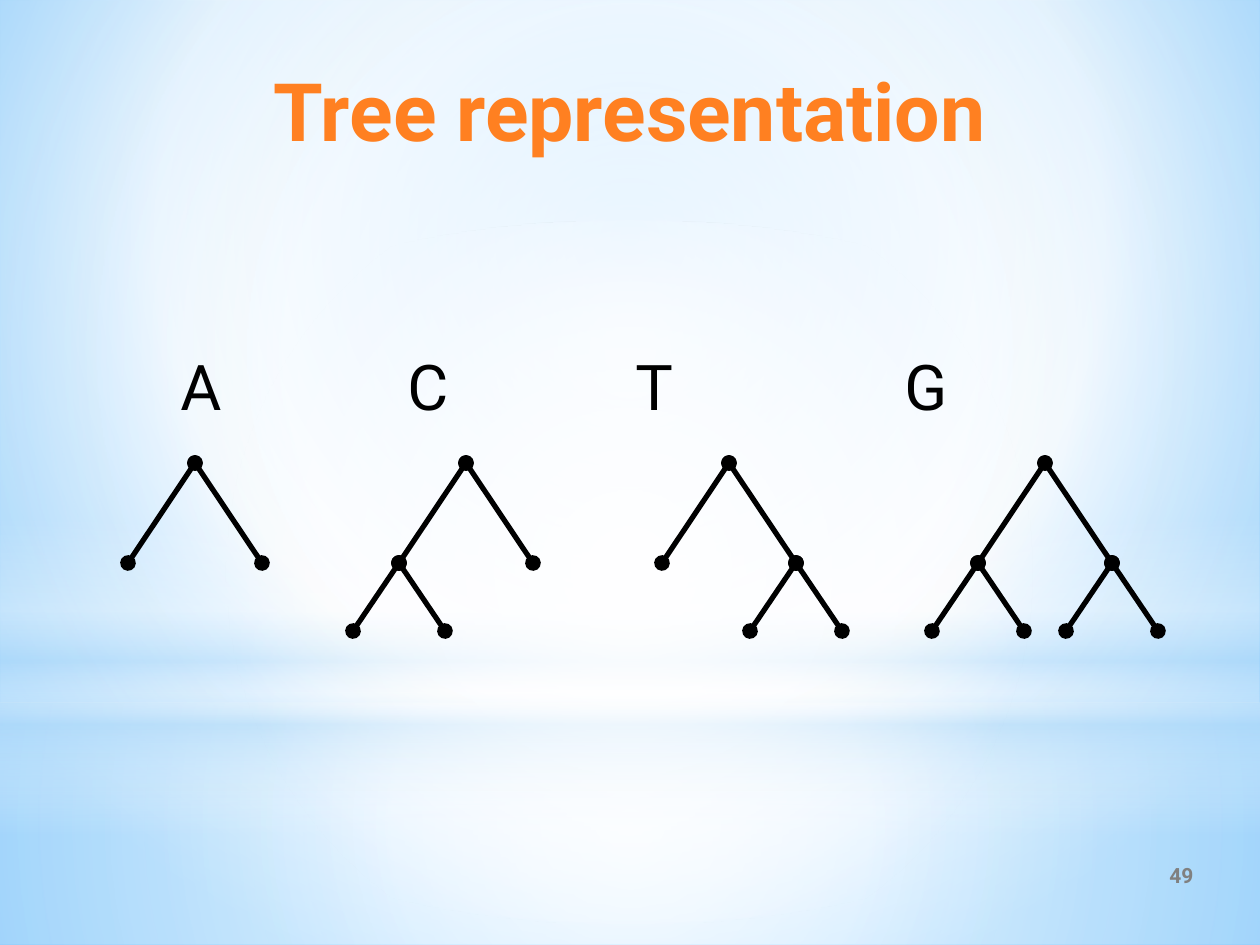
from lxml import etree
from pptx import Presentation
from pptx.dml.color import RGBColor
from pptx.enum.shapes import MSO_CONNECTOR, MSO_SHAPE
from pptx.enum.text import MSO_ANCHOR, PP_ALIGN
from pptx.oxml.ns import qn
from pptx.util import Pt

RECT, OVAL = MSO_SHAPE.RECTANGLE, MSO_SHAPE.OVAL
STRAIGHT = MSO_CONNECTOR.STRAIGHT
LEFT, CENTER, RIGHT = PP_ALIGN.LEFT, PP_ALIGN.CENTER, PP_ALIGN.RIGHT
TOP, MIDDLE = MSO_ANCHOR.TOP, MSO_ANCHOR.MIDDLE
PX = 914400 / 126  # EMU per px

THEME = {
    "font": "Roboto",
    "title": "FF8021", "ink": "000000", "number": "808080",
    "white": "FFFFFF", "pale": "B4DCFA", "sky": "9ED5FF", "blue": "5BB9FF",
    "title_size": 46, "letter_size": 36, "number_size": 12, "line_width": 3,
}
WHITE, PALE = THEME["white"], THEME["pale"]


def set_gradient(fill, element, stops, focus=None):
    """Stops are (position %, colour, opacity %); no focus means top to bottom."""
    fill.gradient()
    grad = element.find(".//" + qn("a:gradFill"))
    for child in list(grad):
        grad.remove(child)
    stop_list = etree.SubElement(grad, qn("a:gsLst"))
    for pos, color, opacity in stops:
        gs = etree.SubElement(stop_list, qn("a:gs"), pos=str(pos * 1000))
        clr = etree.SubElement(gs, qn("a:srgbClr"), val=color)
        if opacity < 100:
            etree.SubElement(clr, qn("a:alpha"), val=str(opacity * 1000))
    if focus:
        path = etree.SubElement(grad, qn("a:path"), path="circle")
        sides = {side: str(v * 1000) for side, v in zip("ltrb", focus)}
        etree.SubElement(path, qn("a:fillToRect"), **sides)
    else:
        etree.SubElement(grad, qn("a:lin"), ang="5400000", scaled="0")


def add_text(text, box, size, color, bold=False, align=LEFT, anchor=TOP):
    tb = slide.shapes.add_textbox(*[round(v * PX) for v in box])
    tf = tb.text_frame
    tf.word_wrap = True
    tf.vertical_anchor = anchor
    p = tf.paragraphs[0]
    p.alignment = align
    r = p.add_run()
    r.text = text
    r.font.name, r.font.size, r.font.bold = THEME["font"], Pt(size), bold
    r.font.color.rgb = RGBColor.from_string(color)
    return p


prs = Presentation()
prs.slide_width, prs.slide_height = round(1260 * PX), round(945 * PX)
slide = prs.slides.add_slide(prs.slide_layouts[6])

# Background and its soft light layers
set_gradient(slide.background.fill, slide.element,
             [(0, THEME["sky"], 100), (60, WHITE, 100), (100, THEME["blue"], 100)],
             focus=(20, 10, 20, 60))
middle = (50, 50, 50, 50)
layers = [
    (RECT, (0, 703, 1260, 242),
     [(0, WHITE, 91), (37, WHITE, 76), (100, PALE, 79)], middle),
    (RECT, (0, 0, 1260, 703),
     [(0, WHITE, 89), (48, WHITE, 62), (100, PALE, 79)], middle),
    (RECT, (0, 519, 1260, 315),
     [(0, WHITE, 0), (29, WHITE, 30), (45, PALE, 40),
      (55, WHITE, 26), (65, PALE, 60), (100, WHITE, 0)], None),
    (OVAL, (0, 221, 1260, 703), [(0, WHITE, 100), (56, WHITE, 0)], middle),
]
for kind, box, stops, focus in layers:
    sp = slide.shapes.add_shape(kind, *[round(v * PX) for v in box])
    sp.shadow.inherit = False
    sp.line.fill.background()
    set_gradient(sp.fill, sp.element, stops, focus)

# Title and slide number
add_text("Tree representation", (84, 55, 1091, 110), THEME["title_size"],
         THEME["title"], bold=True, align=CENTER)
add_text("49", (954, 850, 252, 50), THEME["number_size"],
         THEME["number"], bold=True, align=RIGHT, anchor=MIDDLE)

# Trees: root x and the sides (-1 left, 1 right) whose child branches again
trees = [(195, []), (466, [-1]), (729, [1]), (1045, [-1, 1])]
ROOT_Y, CHILD_Y, LEAF_Y = 463, 563, 631
CHILD_DX, LEAF_DX = 67, 46
for root_x, branching in trees:
    edges = [(root_x, ROOT_Y, root_x + side * CHILD_DX, CHILD_Y) for side in (-1, 1)]
    for side in branching:
        x = root_x + side * CHILD_DX
        edges += [(x, CHILD_Y, x + d * LEAF_DX, LEAF_Y) for d in (-1, 1)]
    group = slide.shapes.add_group_shape()
    for edge in edges:
        cn = group.shapes.add_connector(STRAIGHT, *[round(v * PX) for v in edge])
        cn.line.width = Pt(THEME["line_width"])
        cn.line.color.rgb = RGBColor.from_string(THEME["ink"])
        ln = cn.line._get_or_add_ln()
        for end in ("a:headEnd", "a:tailEnd"):
            etree.SubElement(ln, qn(end), type="oval")
        etree.SubElement(cn.element.spPr, qn("a:effectLst"))

# Letters above the trees, spaced by tab stops
p = add_text("A\tC\tT\tG", (168, 341, 999, 106), THEME["letter_size"], THEME["ink"])
tabs = etree.SubElement(p._p.get_or_add_pPr(), qn("a:tabLst"))
for stop in (227, 455, 724):
    etree.SubElement(tabs, qn("a:tab"), pos=str(round(stop * PX)), algn="l")

prs.save("out.pptx")
